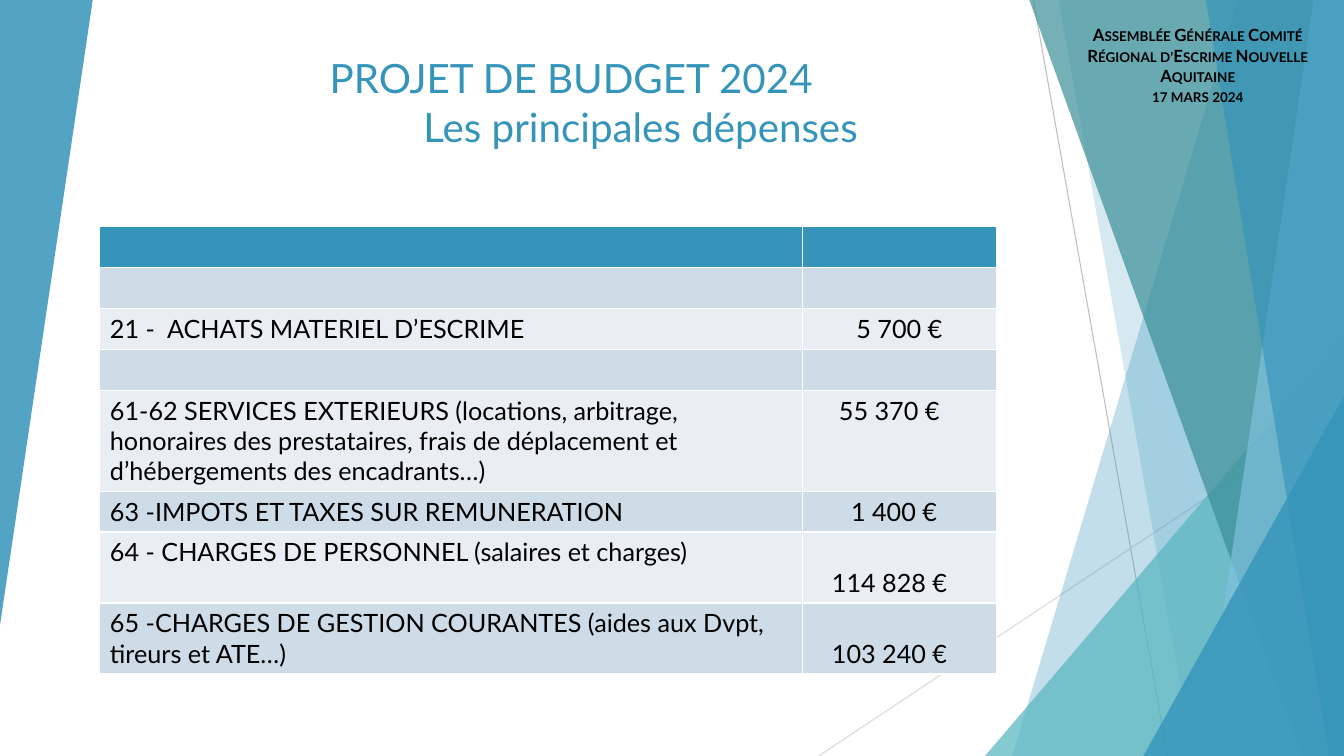
import pptx
import pptx.util
import pptx.dml.color
import pptx.enum.shapes
import pptx.enum.text
import pptx.oxml.ns
from lxml import etree

RGB = pptx.dml.color.RGBColor
BLUE = RGB(0x34, 0x94, 0xBA)
SKY = RGB(0x7F, 0xC1, 0xDB)
TEAL = RGB(0x3A, 0x8F, 0x98)
AQUA = RGB(0x58, 0xB6, 0xC0)
GREY = RGB(0xBF, 0xBF, 0xBF)
PALE_GREY = RGB(0xD9, 0xD9, 0xD9)
BAND_DARK = RGB(0xCE, 0xDC, 0xE7)
BAND_LIGHT = RGB(0xE8, 0xEE, 0xF3)
BLACK = RGB(0, 0, 0)

WIDTH, HEIGHT = pptx.util.Inches(13.33), pptx.util.Inches(7.5)
ANCHOR = pptx.enum.text.MSO_ANCHOR
ALIGN = pptx.enum.text.PP_ALIGN
qn = pptx.oxml.ns.qn

# Label, amount, indent of the amount in inches (None = centred), amount at the bottom
EXPENSES = [
    ("", "", 0, False),
    ("", "", 0, False),
    ("21 -  ACHATS MATERIEL D’ESCRIME", "5 700 €", None, False),
    ("", "", 0, False),
    ("61-62 SERVICES EXTERIEURS (locations, arbitrage, honoraires des prestataires, "
     "frais de déplacement et d’hébergements des encadrants…)", "55 370 €", 0.26, False),
    ("63 -IMPOTS ET TAXES SUR REMUNERATION", "1 400 €", 0.38, False),
    ("64 - CHARGES DE PERSONNEL (salaires et charges)", "114 828 €", 0.19, True),
    ("65 -CHARGES DE GESTION COURANTES (aides aux Dvpt, tireurs et ATE…)",
     "103 240 €", 0.19, True),
]
COLUMN_SHARES = [52.29, 14.4]
ROW_SHARES = [5.4, 5.4, 5.4, 5.4, 13.36, 5.4, 9.39, 9.39]


def x(share):
    """Percentage of the slide's width."""
    return round(WIDTH * share / 100)


def y(share):
    """Percentage of the slide's height."""
    return round(HEIGHT * share / 100)


def box(left, top, width, height):
    return x(left), y(top), x(width), y(height)


def paint(sp, color, opacity):
    sp.shadow.inherit = False
    sp.line.fill.background()
    sp.fill.solid()
    sp.fill.fore_color.rgb = color
    clr = sp.fill._xPr.find(".//" + qn("a:srgbClr"))
    etree.SubElement(clr, qn("a:alpha")).set("val", str(opacity * 1000))


def add_panel(s, top_x, bottom_x, color, opacity):
    """Full-height panel with a slanted left edge, reaching the right side."""
    fb = s.shapes.build_freeform(x(top_x), 0, scale=1.0)
    fb.add_line_segments([(WIDTH, 0), (WIDTH, HEIGHT), (x(bottom_x), HEIGHT)])
    paint(fb.convert_to_shape(), color, opacity)


def add_triangle(s, area, color, opacity, rotation=0):
    kind = pptx.enum.shapes.MSO_SHAPE.ISOSCELES_TRIANGLE
    sp = s.shapes.add_shape(kind, *box(*area))
    sp.adjustments[0] = 1
    sp.rotation = rotation
    paint(sp, color, opacity)


def add_line(s, x1, y1, x2, y2, color):
    kind = pptx.enum.shapes.MSO_CONNECTOR.STRAIGHT
    line = s.shapes.add_connector(kind, x(x1), y(y1), x(x2), y(y2))
    line.line.color.rgb = color
    line.line.width = pptx.util.Pt(0.75)
    etree.SubElement(line._element.spPr, qn("a:effectLst"))


def write(p, text, size, color, align=ALIGN.LEFT, indent=0, bold=False):
    p.text = text
    p.alignment = align
    p.font.name = "Lato"
    p.font.size = pptx.util.Pt(size)
    p.font.color.rgb = color
    p.font.bold = bold
    if indent:
        p._p.get_or_add_pPr().set("marL", str(pptx.util.Inches(indent)))


def add_backdrop(s):
    add_line(s, 76.89, 0, 86.87, 100, GREY)
    add_line(s, 100, 53.73, 60.92, 100, PALE_GREY)
    add_panel(s, 92.12, 75.32, BLUE, 30)
    add_panel(s, 78.77, 88.75, BLUE, 20)
    add_triangle(s, (73.29, 44.4, 26.71, 55.6), AQUA, 72)
    add_panel(s, 76.59, 96.85, TEAL, 70)
    add_panel(s, 97.75, 89.42, SKY, 70)
    add_panel(s, 89.72, 98.87, BLUE, 65)
    add_triangle(s, (85.07, 52.4, 14.93, 47.6), BLUE, 80)
    add_triangle(s, (0, 0, 6.9, 82.67), BLUE, 85, rotation=180)


def add_title(s):
    sp = s.shapes.title
    sp.left, sp.top, sp.width, sp.height = box(23.78, 6, 63.69, 14.53)
    tf = sp.text_frame
    tf.auto_size = pptx.enum.text.MSO_AUTO_SIZE.NONE
    tf.vertical_anchor = ANCHOR.BOTTOM
    write(tf.paragraphs[0], "PROJET DE BUDGET 2024", 28.8, BLUE)
    write(tf.add_paragraph(), "Les principales dépenses", 28.8, BLUE, indent=0.93)
    for p in tf.paragraphs:
        p.space_before = pptx.util.Pt(0)
    # Bring the title in front of the backdrop
    sp._element.getparent().append(sp._element)


def add_expenses(s):
    area = box(7.43, 30, sum(COLUMN_SHARES), sum(ROW_SHARES))
    table = s.shapes.add_table(len(EXPENSES), len(COLUMN_SHARES), *area).table
    for column, share in zip(table.columns, COLUMN_SHARES):
        column.width = x(share)
    for i, (label, amount, indent, at_bottom) in enumerate(EXPENSES):
        table.rows[i].height = y(ROW_SHARES[i])
        fill = BLUE if i == 0 else BAND_DARK if i % 2 else BAND_LIGHT
        for cell in table.rows[i].cells:
            cell.fill.solid()
            cell.fill.fore_color.rgb = fill
        left, right = table.rows[i].cells
        if label:
            write(left.text_frame.paragraphs[0], label, 18, BLACK)
            align = ALIGN.CENTER if indent is None else ALIGN.LEFT
            write(right.text_frame.paragraphs[0], amount, 18, BLACK, align, indent)
        if at_bottom:
            right.vertical_anchor = ANCHOR.BOTTOM


def add_event(s):
    tf = s.shapes.add_textbox(*box(78.24, 2.67, 21.76, 9.47)).text_frame
    tf.word_wrap = True
    lines = ["Assemblée Générale Comité Régional d’Escrime Nouvelle Aquitaine",
             "17 mars 2024"]
    for i, text in enumerate(lines):
        p = tf.add_paragraph() if i else tf.paragraphs[0]
        write(p, text, 12, BLACK, ALIGN.CENTER, bold=True)
        p.font._rPr.set("cap", "small")


def main():
    prs = pptx.Presentation()
    prs.slide_width, prs.slide_height = WIDTH, HEIGHT
    s = prs.slides.add_slide(prs.slide_layouts[5])
    add_backdrop(s)
    add_title(s)
    add_expenses(s)
    add_event(s)
    prs.save("out.pptx")


if __name__ == "__main__":
    main()
